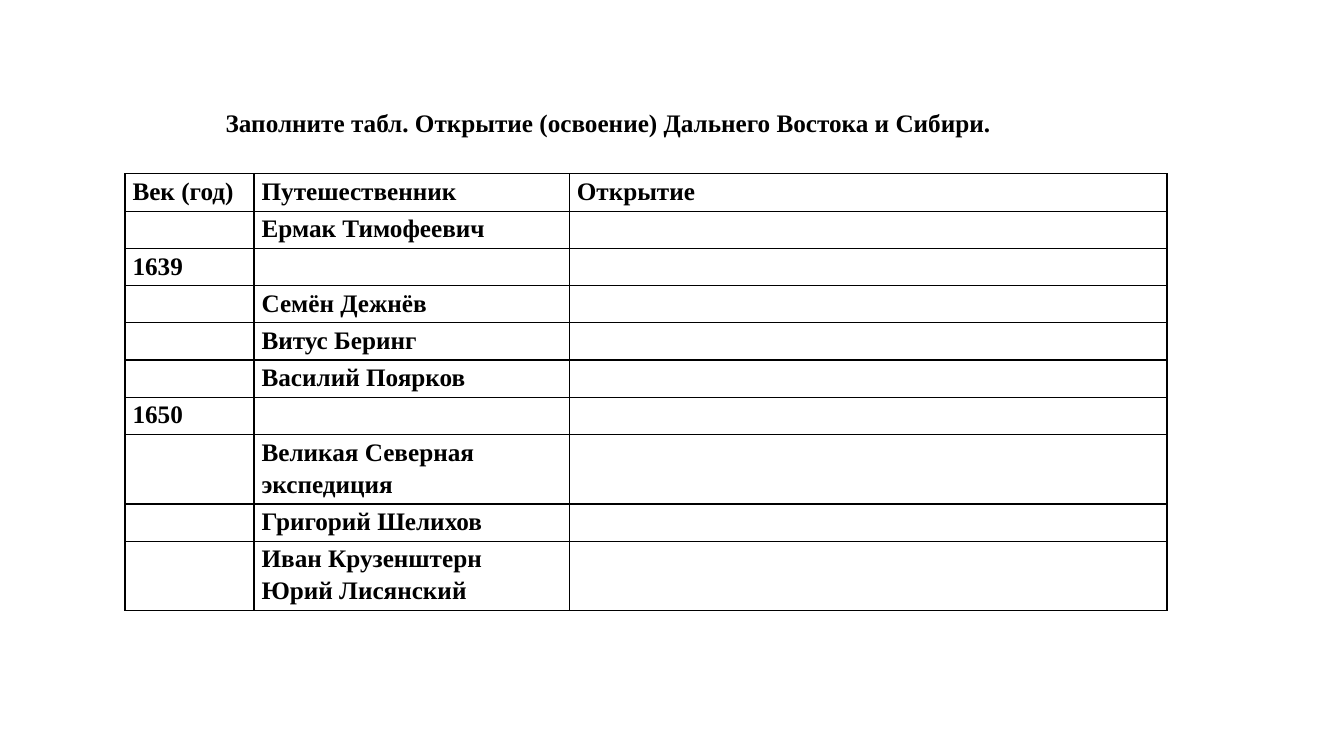
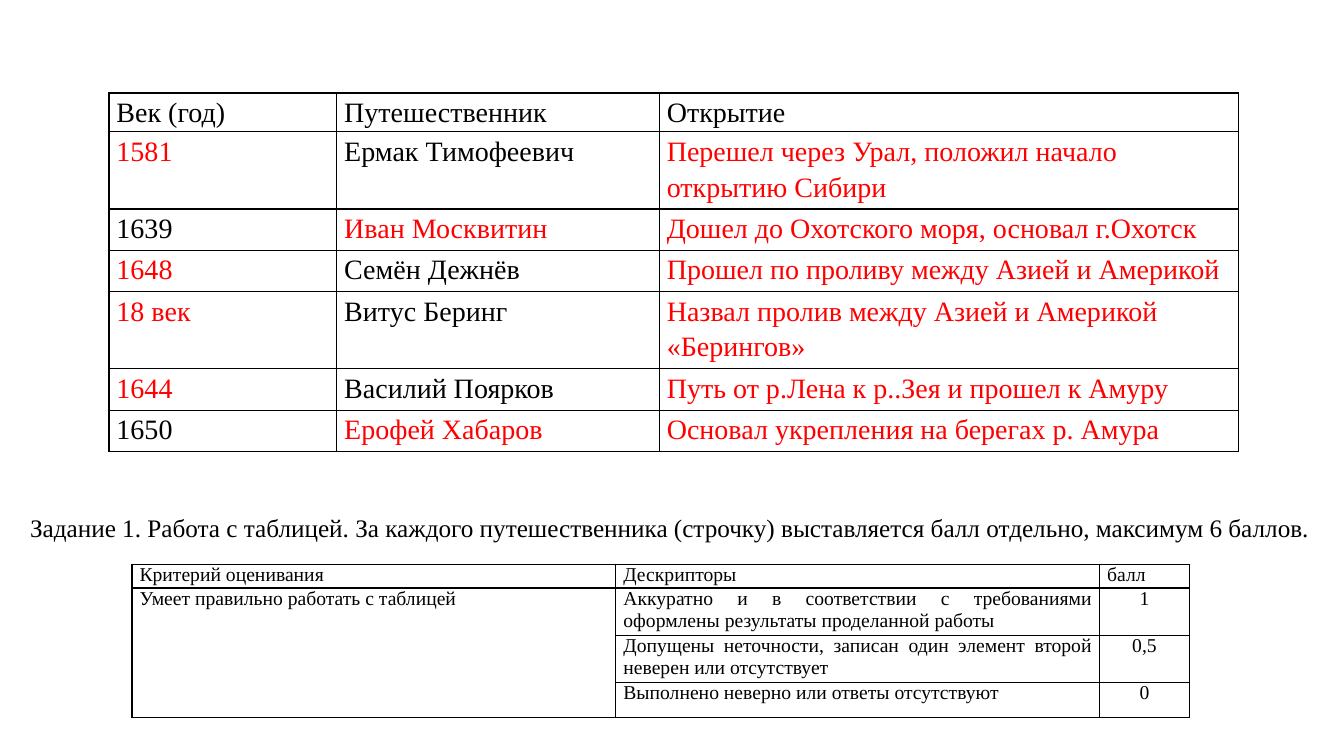
from lxml import etree
from pptx import Presentation
from pptx.dml.color import RGBColor
from pptx.enum.text import MSO_ANCHOR, MSO_AUTO_SIZE, PP_ALIGN
from pptx.oxml.ns import qn
from pptx.util import Pt

LEFT, CENTER, JUSTIFY = PP_ALIGN.LEFT, PP_ALIGN.CENTER, PP_ALIGN.JUSTIFY
TOP, MIDDLE = MSO_ANCHOR.TOP, MSO_ANCHOR.MIDDLE
GROW = MSO_AUTO_SIZE.SHAPE_TO_FIT_TEXT

COLORS = {"text": "000000", "answer": "FF0000", "border": "000000"}
FONT = "Times New Roman"
TITLE_ONLY, BLANK = 5, 6

HEADER = ["Век (год)", "Путешественник", "Открытие"]
WORKSHEET = [
    HEADER,
    ["", "Ермак Тимофеевич", ""],
    ["1639", "", ""],
    ["", "Семён Дежнёв", ""],
    ["", "Витус Беринг", ""],
    ["", "Василий Поярков", ""],
    ["1650", "", ""],
    ["", "Великая Северная экспедиция", ""],
    ["", "Григорий Шелихов", ""],
    ["", "Иван Крузенштерн\nЮрий Лисянский", ""],
]
ANSWERS = [
    HEADER,
    ["1581", "Ермак Тимофеевич", "Перешел через Урал, положил начало открытию Сибири"],
    ["1639", "Иван Москвитин", "Дошел до Охотского моря, основал г.Охотск"],
    ["1648", "Семён Дежнёв", "Прошел по проливу между Азией и Америкой"],
    ["18 век", "Витус Беринг", "Назвал пролив между Азией и Америкой «Берингов»"],
    ["1644", "Василий Поярков", "Путь от р.Лена к р..Зея и прошел к Амуру"],
    ["1650", "Ерофей Хабаров", "Основал укрепления на берегах р. Амура"],
]
CRITERIA = [
    ["Критерий оценивания", "Дескрипторы", "балл"],
    ["Умеет правильно работать с таблицей",
     "Аккуратно и в соответствии с требованиями оформлены результаты проделанной работы", "1"],
    ["", "Допущены неточности, записан один элемент второй неверен или отсутствует", "0,5"],
    ["", "Выполнено неверно или ответы отсутствуют", "0"],
]


def answer_color(row, column):
    """Cells left empty in the worksheet are answers."""
    return "text" if WORKSHEET[row][column] else "answer"


def criteria_alignment(row, column):
    return JUSTIFY if row == 0 else (LEFT, JUSTIFY, CENTER)[column]


class Deck:
    def __init__(self):
        self.presentation = Presentation()
        self.presentation.slide_width = Pt(960)
        self.presentation.slide_height = Pt(540)
        self.slide = None

    def add_slide(self, layout):
        self.slide = self.presentation.slides.add_slide(self.presentation.slide_layouts[layout])

    def format_text(self, frame, size, bold=False, color="text", alignment=LEFT, spacing=1.0):
        for paragraph in frame.paragraphs:
            paragraph.alignment = alignment
            paragraph.line_spacing = spacing
            font = paragraph.font
            font.name, font.size, font.bold = FONT, Pt(size), bold
            font.color.rgb = RGBColor.from_string(COLORS[color])

    def title(self, text, left, top, width, height):
        shape = self.slide.shapes.title
        shape.left, shape.top, shape.width, shape.height = map(Pt, (left, top, width, height))
        frame = shape.text_frame
        frame.text = text
        frame.vertical_anchor, frame.auto_size = TOP, GROW
        self.format_text(frame, 18, bold=True, spacing=1.15)

    def caption(self, text, left, top, width, height):
        shape = self.slide.shapes.add_textbox(*map(Pt, (left, top, width, height)))
        frame = shape.text_frame
        frame.text = text
        frame.word_wrap = False
        frame.vertical_anchor, frame.auto_size = MIDDLE, GROW
        self.format_text(frame, 18)

    def border(self, cell):
        properties = cell._tc.get_or_add_tcPr()
        for index, side in enumerate(("lnL", "lnR", "lnT", "lnB")):
            line = etree.Element(qn(f"a:{side}"), w=str(Pt(1)))
            fill = etree.SubElement(line, qn("a:solidFill"))
            etree.SubElement(fill, qn("a:srgbClr"), val=COLORS["border"])
            properties.insert(index, line)

    def table(self, rows, left, top, widths, heights, size, bold=False, spacing=1.15,
              color_of=lambda row, column: "text", alignment_of=lambda row, column: LEFT):
        frame = self.slide.shapes.add_table(
            len(rows), len(widths), Pt(left), Pt(top), Pt(sum(widths)), Pt(sum(heights)))
        table = frame.table
        table.first_row = table.horz_banding = False
        for column, width in zip(table.columns, widths):
            column.width = Pt(width)
        for row, height in zip(table.rows, heights):
            row.height = Pt(height)
        for row, texts in enumerate(rows):
            for column, text in enumerate(texts):
                cell = table.cell(row, column)
                cell.text = text
                cell.margin_left = cell.margin_right = Pt(5.4)
                cell.margin_top = cell.margin_bottom = 0
                cell.fill.background()
                self.border(cell)
                self.format_text(cell.text_frame, size, bold, color_of(row, column),
                                 alignment_of(row, column), spacing)
        return table


def main():
    deck = Deck()

    # Worksheet to fill in
    deck.add_slide(TITLE_ONLY)
    deck.title("Заполните табл. Открытие (освоение) Дальнего Востока и Сибири.",
               154, 70, 651, 31)
    heights = [44 if row in (7, 9) else 26.6 for row in range(len(WORKSHEET))]
    deck.table(WORKSHEET, 89.3, 124.2, (92.2, 225.2, 427), heights, 18, bold=True)

    # Answers
    deck.add_slide(BLANK)
    deck.table(ANSWERS, 77.8, 66.4, (162.7, 230.4, 414), [16.6] + [29.5] * 6, 20,
               color_of=answer_color)

    # Assessment criteria
    deck.caption("Задание 1. Работа с таблицей. За каждого путешественника (строчку) "
                 "выставляется балл отдельно, максимум 6 баллов.", 14.4, 362.2, 933.8, 29)
    criteria = deck.table(CRITERIA, 94.3, 403.2, (345.6, 345.6, 64), (14.4, 20, 25.2, 25.2),
                          14, spacing=1.0, alignment_of=criteria_alignment)
    criteria.cell(1, 0).merge(criteria.cell(3, 0))

    deck.presentation.save("out.pptx")


if __name__ == "__main__":
    main()
